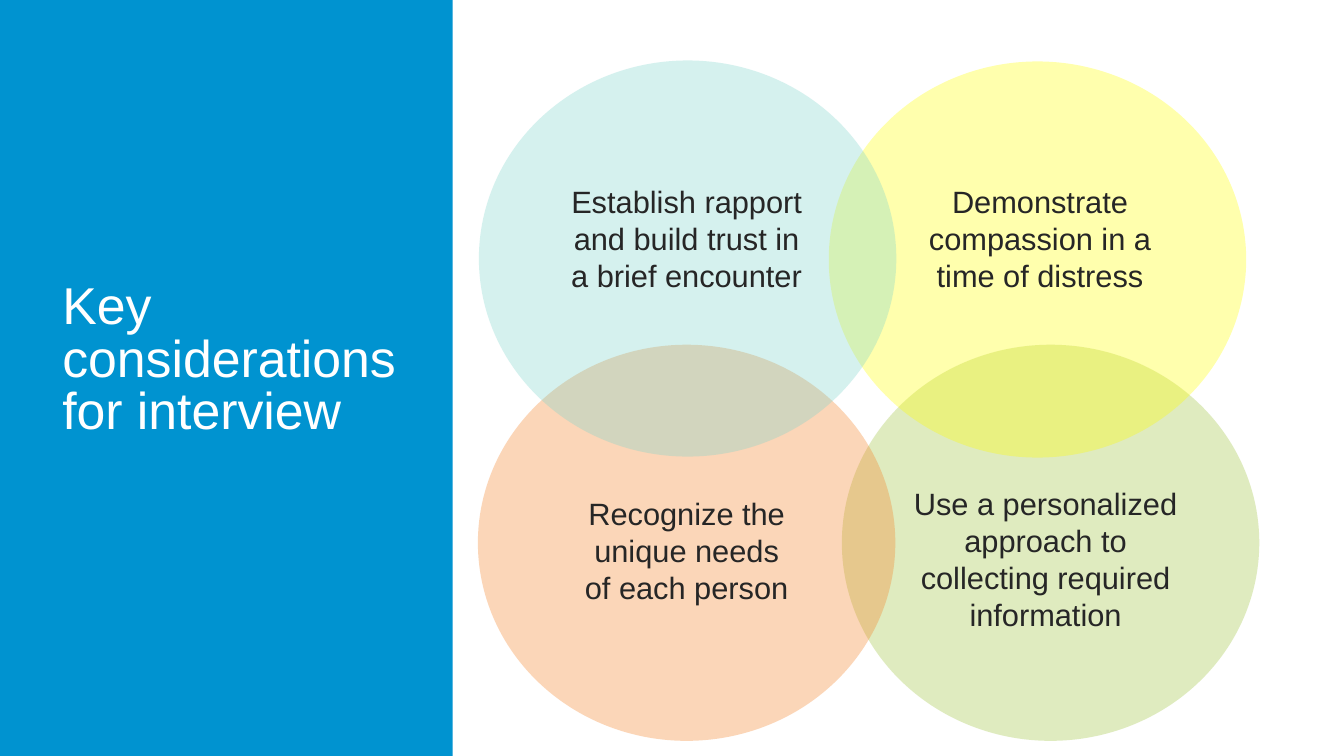
from lxml import etree
from pptx import Presentation
from pptx.dml.color import RGBColor
from pptx.enum import shapes, text
from pptx.oxml.ns import qn
from pptx.util import Inches, Pt

FONT = "Arial"
CIRCLE_WIDTH, CIRCLE_HEIGHT = 4.14, 3.93

# Circle left, top and colour, then caption box and wording, back to front
CONSIDERATIONS = [
    (8.35, 3.42, "9DC23B", (9.03, 4.81, 2.68, 1.26),
     "Use a personalized approach to collecting required information"),
    (4.74, 3.42, "F58024", (5.77, 4.91, 2.08, 1.26),
     "Recognize the unique needs of each person"),
    (8.22, 0.61, "FFFF00", (9.17, 1.81, 2.29, 1.7),
     "Demonstrate compassion in a time of distress"),
    (4.75, 0.6, "7ED5CC", (5.64, 1.81, 2.34, 1.33),
     "Establish rapport and build trust in a brief encounter"),
]


def color(value):
    return RGBColor.from_string(value)


def add_filled_shape(page, kind, box, fill, opacity=100):
    shape = page.shapes.add_shape(kind, *map(Inches, box))
    shape.shadow.inherit = False
    shape.line.fill.background()
    shape.fill.solid()
    shape.fill.fore_color.rgb = color(fill)
    if opacity < 100:
        swatch = shape._element.spPr.find(qn("a:solidFill"))[0]
        etree.SubElement(swatch, qn("a:alpha"), val=str(opacity * 1000))


def add_text(page, box, wording, size, ink, align, anchor, insets=(0, 0), spacing=None):
    frame = page.shapes.add_textbox(*map(Inches, box)).text_frame
    frame.word_wrap = True
    frame.vertical_anchor = anchor
    frame.margin_left = frame.margin_right = Inches(insets[0])
    frame.margin_top = frame.margin_bottom = Inches(insets[1])
    para = frame.paragraphs[0]
    para.alignment = align
    if spacing:
        para.line_spacing = spacing
    span = para.add_run()
    span.text = wording
    span.font.name = FONT
    span.font.size = Pt(size)
    span.font.color.rgb = color(ink)


def add_title_panel(page, left, top, width, height):
    add_filled_shape(page, shapes.MSO_SHAPE.RECTANGLE, (left, top, width, height), "0093D0")
    add_text(page, (left + 0.52, top + 1.92, 3.7, 2.5), "Key considerations for interview",
             37, "FFFFFF", text.PP_ALIGN.LEFT, text.MSO_ANCHOR.BOTTOM, (0.1, 0.05), 0.85)


def add_circles(page):
    """Draw all circles first, so that no overlap tints a caption."""
    for left, top, fill, _, _ in CONSIDERATIONS:
        add_filled_shape(page, shapes.MSO_SHAPE.OVAL,
                         (left, top, CIRCLE_WIDTH, CIRCLE_HEIGHT), fill, 32)
    for _, _, _, caption_box, wording in CONSIDERATIONS:
        add_text(page, caption_box, wording, 22, "262626",
                 text.PP_ALIGN.CENTER, text.MSO_ANCHOR.TOP)


def main():
    deck = Presentation()
    deck.slide_width, deck.slide_height = Inches(13.33), Inches(7.5)
    page = deck.slides.add_slide(deck.slide_layouts[6])
    add_title_panel(page, 0, 0, 4.49, 7.5)
    add_circles(page)
    deck.save("out.pptx")


if __name__ == "__main__":
    main()
